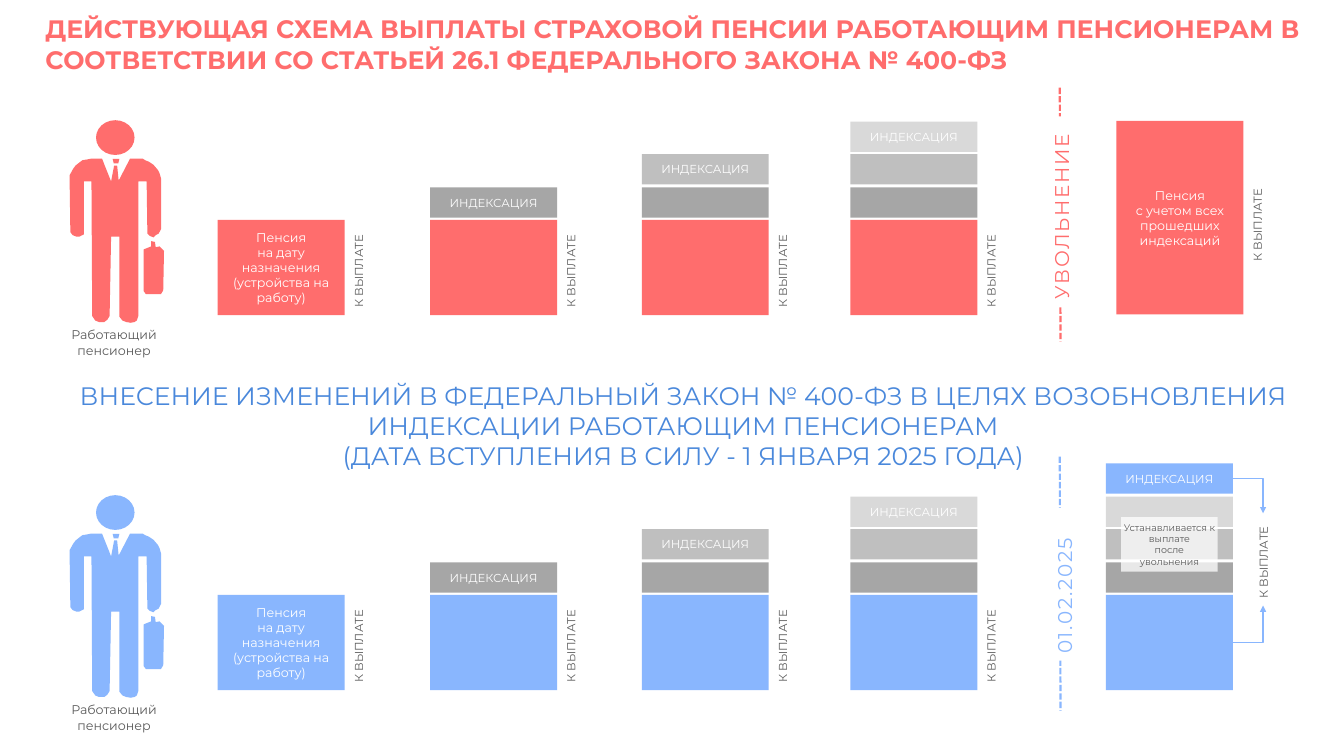
from lxml.etree import SubElement
from pptx import Presentation
from pptx.dml.color import RGBColor
from pptx.enum.dml import MSO_LINE
from pptx.enum.shapes import MSO_CONNECTOR, MSO_SHAPE
from pptx.enum.text import MSO_ANCHOR, MSO_AUTO_SIZE, PP_ALIGN
from pptx.oxml.ns import qn
from pptx.util import Pt

PX = 9144
FONT = "Montserrat"
COLORS = {
    "red": "FF6D6D", "blue": "89B6FE", "heading": "4A88DB", "text": "5A5A5A",
    "white": "FFFFFF", "dark": "A6A6A6", "mid": "BFBFBF", "light": "D9D9D9",
}
LAYERS = ["dark", "mid", "light"]
COLUMNS = [288, 569, 849, 1125]
BAR_W, BASE_H, LAYER_H = 168, 126, 40
ROW_STEP = 496
BASE_Y = 291
INDEXATION = "ИНДЕКСАЦИЯ"
BODY = [
    (92, 232), (97, 223), (100, 219), (105, 215), (109, 212), (115, 211), (120, 210),
    (135, 210), (147, 240), (151, 219), (155, 219), (157, 239), (172, 210), (189, 210),
    (192, 212), (197, 214), (203, 218), (209, 225), (211, 229), (213, 236), (213, 303),
    (210, 309), (206, 311), (203, 314), (198, 312), (195, 309), (194, 240), (183, 240),
    (183, 418), (181, 424), (178, 426), (173, 427), (167, 426), (162, 424), (158, 419),
    (158, 313), (147, 313), (145, 418), (142, 423), (138, 426), (131, 426), (126, 424),
    (124, 421), (122, 418), (121, 240), (111, 240), (111, 310), (107, 312), (105, 313),
    (101, 313), (96, 311), (93, 307), (93, 302),
]
BRIEFCASE = [
    (190, 330), (200, 326), (200, 319), (205, 320), (206, 327), (211, 326),
    (217, 332), (216, 384), (213, 389), (193, 389), (190, 385),
]


def color(name):
    return RGBColor.from_string(COLORS[name])


class Deck:
    def __init__(self, width, height):
        self.prs = Presentation()
        self.prs.slide_width, self.prs.slide_height = width * PX, height * PX
        self.s = self.prs.slides.add_slide(self.prs.slide_layouts[5])

    def put_text(self, sp, text, size, fill, align=PP_ALIGN.CENTER, anchor=MSO_ANCHOR.MIDDLE,
                 insets=(18, 9), wrap=True, bold=False, vertical=False, spacing=0):
        tf = sp.text_frame
        tf.text = text
        tf.word_wrap = wrap
        tf.auto_size = MSO_AUTO_SIZE.NONE
        tf.vertical_anchor = anchor
        tf.margin_left = tf.margin_right = insets[0] * PX
        tf.margin_top = tf.margin_bottom = insets[1] * PX
        if vertical:
            sp.element.txBody.find(qn("a:bodyPr")).set("vert", "vert270")
        for p in tf.paragraphs:
            p.alignment = align
            p.font.size = Pt(size)
            for r in p.runs:
                r.font.name, r.font.size, r.font.bold = FONT, Pt(size), bold
                r.font.color.rgb = color(fill)
                if spacing:
                    r._r.get_or_add_rPr().set("spc", str(spacing))

    def paint(self, sp, fill):
        sp.shadow.inherit = False
        sp.fill.solid()
        sp.fill.fore_color.rgb = color(fill)
        sp.line.fill.background()
        return sp

    def title(self, x, y, w, h, text):
        sp = self.s.shapes.title
        sp.left, sp.top, sp.width, sp.height = (v * PX for v in (x, y, w, h))
        self.put_text(sp, text, 24, "red", PP_ALIGN.LEFT, MSO_ANCHOR.TOP, (10, 5), bold=True)

    def text(self, x, y, w, h, text, size, fill, **style):
        sp = self.s.shapes.add_textbox(x * PX, y * PX, w * PX, h * PX)
        self.put_text(sp, text, size, fill, anchor=MSO_ANCHOR.TOP, **style)

    def shape(self, x, y, w, h, fill, kind=MSO_SHAPE.RECTANGLE, shapes=None):
        shapes = shapes or self.s.shapes
        return self.paint(shapes.add_shape(kind, x * PX, y * PX, w * PX, h * PX), fill)

    def outline(self, points, dy, fill, shapes):
        moved = [(x, y + dy) for x, y in points]
        fb = shapes.build_freeform(*moved[0], scale=PX)
        fb.add_line_segments(moved[1:], close=True)
        self.paint(fb.convert_to_shape(), fill)

    def line(self, x1, y1, x2, y2, fill, width, elbow=False):
        kind = MSO_CONNECTOR.ELBOW if elbow else MSO_CONNECTOR.STRAIGHT
        cn = self.s.shapes.add_connector(kind, x1 * PX, y1 * PX, x2 * PX, y2 * PX)
        cn.line.color.rgb = color(fill)
        cn.line.width = Pt(width)
        spPr = cn.element.spPr
        if elbow:
            spPr.find(qn("a:prstGeom")).set("prst", "bentConnector2")
            SubElement(spPr.find(qn("a:ln")), qn("a:tailEnd"), type="triangle")
        else:
            cn.line.dash_style = MSO_LINE.SQUARE_DOT
        SubElement(spPr, qn("a:effectLst"))

    def payout_label(self, x, y):
        self.text(x, y, 54, 122, "К ВЫПЛАТЕ", 11, "text", align=PP_ALIGN.LEFT,
                  wrap=False, vertical=True)

    def stack(self, x, base, fill, layers):
        bar = self.shape(x, base, BAR_W, BASE_H, fill)
        for i, layer in enumerate(layers, 1):
            sp = self.shape(x, base - 87 * i // 2, BAR_W, LAYER_H, layer)
            if i == len(layers):
                self.put_text(sp, INDEXATION, 11, "white", insets=(0, 0))
        return bar

    def pensioner(self, dy, fill):
        shapes = self.s.shapes.add_group_shape().shapes
        self.shape(127, 159 + dy, 51, 46, fill, MSO_SHAPE.OVAL, shapes)
        self.outline(BODY, dy, fill, shapes)
        knot = self.shape(149, 210 + dy, 9, 6, fill, MSO_SHAPE.TRAPEZOID, shapes)
        knot.rotation = 180
        self.outline(BRIEFCASE, dy, fill, shapes)
        self.text(73, 424 + dy, 156, 58, "Работающий\vпенсионер", 12, "text", wrap=False)

    def scheme(self, dy, fill):
        self.pensioner(dy, fill)
        for i, x in enumerate(COLUMNS):
            bar = self.stack(x, BASE_Y + dy, fill, LAYERS[:i])
            if i == 0:
                self.put_text(bar, "Пенсия\vна дату назначения\v(устройства на работу)",
                              12, "white")
            self.payout_label(x + 159, 294 + dy)

    def milestone(self, line_y, x, y, h, text, fill):
        self.line(1402, line_y, 1403, line_y + 336, fill, 0)
        sp = self.shape(x, y, 68, h, "white")
        self.put_text(sp, text, 19, fill, PP_ALIGN.LEFT, MSO_ANCHOR.TOP,
                      wrap=False, vertical=True, spacing=160)

    def note(self, x, y, w, h, text):
        sp = self.shape(x, y, w, h, "white")
        clr = sp.element.spPr.find(qn("a:solidFill")).find(qn("a:srgbClr"))
        SubElement(clr, qn("a:alpha"), val="75000")
        self.put_text(sp, text, 9, "text", insets=(0, 9))


def main():
    deck = Deck(1778, 1000)
    deck.title(50, 13, 1742, 174,
               "ДЕЙСТВУЮЩАЯ СХЕМА ВЫПЛАТЫ СТРАХОВОЙ ПЕНСИИ РАБОТАЮЩИМ ПЕНСИОНЕРАМ "
               "В СООТВЕТСТВИИ СО СТАТЬЕЙ 26.1 ФЕДЕРАЛЬНОГО ЗАКОНА № 400-ФЗ")
    deck.text(46, 494, 1715, 139,
              "ВНЕСЕНИЕ ИЗМЕНЕНИЙ В ФЕДЕРАЛЬНЫЙ ЗАКОН № 400-ФЗ В ЦЕЛЯХ ВОЗОБНОВЛЕНИЯ "
              "ИНДЕКСАЦИИ РАБОТАЮЩИМ ПЕНСИОНЕРАМ\n"
              "(ДАТА ВСТУПЛЕНИЯ В СИЛУ - 1 ЯНВАРЯ 2025 ГОДА)", 24, "heading")

    deck.scheme(0, "red")
    deck.milestone(116, 1370, 154, 251, "УВОЛЬНЕНИЕ", "red")
    total = deck.shape(1477, 160, BAR_W, 256, "red")
    deck.put_text(total, "Пенсия\vс учетом всех прошедших индексаций", 12, "white")
    deck.payout_label(1636, 233)

    deck.scheme(ROW_STEP, "blue")
    deck.milestone(604, 1374, 672, 202, "01.02.2025", "blue")
    deck.stack(1463, BASE_Y + ROW_STEP, "blue", LAYERS + ["blue"])
    deck.payout_label(1644, 679)
    deck.line(1631, 633, 1671, 679, "blue", 1.5, elbow=True)
    deck.line(1631, 850, 1671, 801, "blue", 1.5, elbow=True)
    deck.note(1483, 684, 128, 72, "Устанавливается к выплате\vпосле\vувольнения")

    deck.prs.save("out.pptx")


if __name__ == "__main__":
    main()
